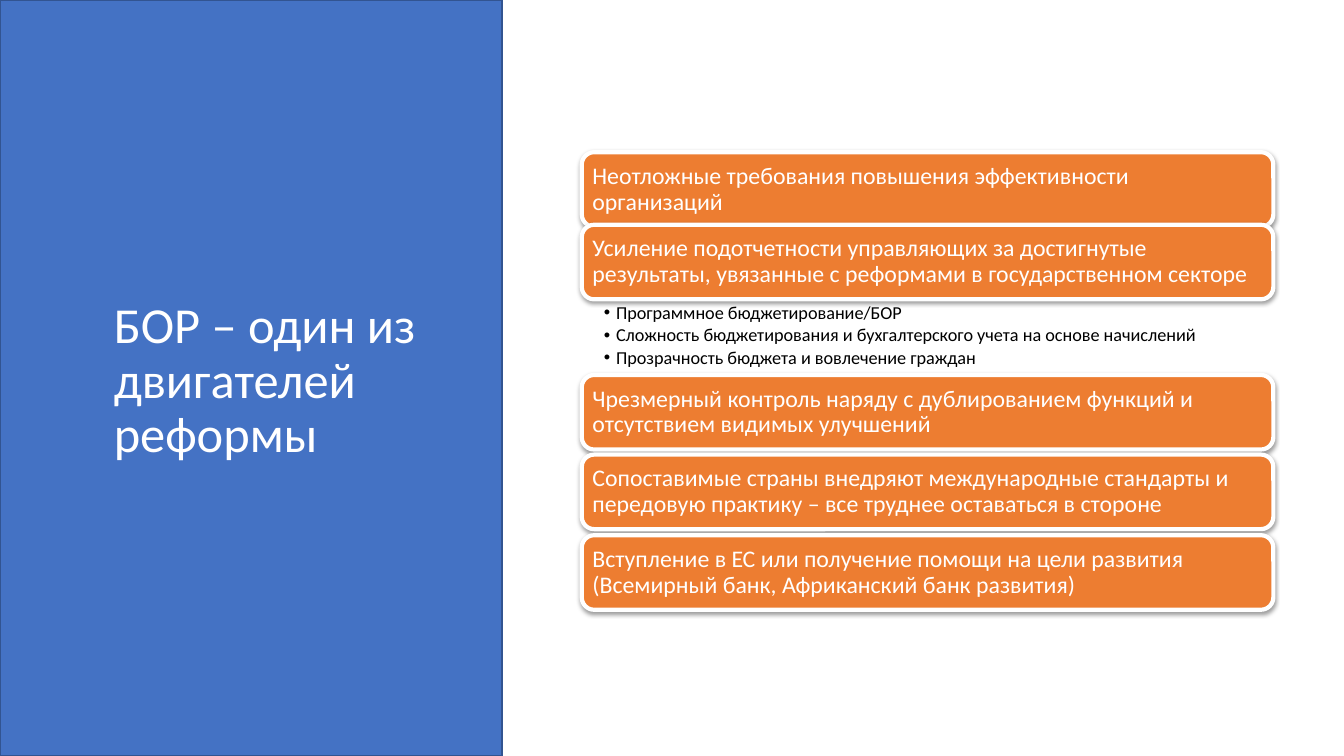
from dataclasses import dataclass
from lxml.etree import SubElement
from pptx import Presentation
from pptx.dml.color import RGBColor
from pptx.enum.shapes import MSO_SHAPE
from pptx.enum.text import MSO_ANCHOR, PP_ALIGN
from pptx.oxml.ns import qn
from pptx.shapes.autoshape import Shape
from pptx.slide import Slide
from pptx.util import Inches, Pt

COLORS = {"panel": "4472C4", "edge": "325491", "card": "ED7D31",
          "white": "FFFFFF", "black": "000000"}
LEFT, WIDTH, HEIGHT = 5.77, 6.86, 0.74


@dataclass
class Card:
    top: float
    text: str


CARDS = [
    Card(1.51, "Неотложные требования повышения эффективности организаций"),
    Card(2.23, "Усиление подотчетности управляющих за достигнутые результаты, "
               "увязанные с реформами в государственном секторе"),
    Card(3.72, "Чрезмерный контроль наряду с дублированием функций и "
               "отсутствием видимых улучшений"),
    Card(4.51, "Сопоставимые страны внедряют международные стандарты и "
               "передовую практику – все труднее оставаться в стороне"),
    Card(5.31, "Вступление в ЕС или получение помощи на цели развития "
               "(Всемирный банк, Африканский банк развития)"),
]
POINTS = [
    "Программное бюджетирование/БОР",
    "Сложность бюджетирования и бухгалтерского учета на основе начислений",
    "Прозрачность бюджета и вовлечение граждан",
]


def color(name: str) -> RGBColor:
    return RGBColor.from_string(COLORS[name])


def paint(shape: Shape, fill: str, line: str, width: float) -> None:
    shape.shadow.inherit = False
    shape.fill.solid()
    shape.fill.fore_color.rgb = color(fill)
    shape.line.color.rgb = color(line)
    shape.line.width = Pt(width)


def write(shape: Shape, text: str, size: float, ink: str,
          insets: tuple[float, float, float, float], anchor: MSO_ANCHOR) -> None:
    frame = shape.text_frame
    frame.text = text
    frame.word_wrap = True
    frame.vertical_anchor = anchor
    (frame.margin_left, frame.margin_top,
     frame.margin_right, frame.margin_bottom) = map(Inches, insets)
    for para in frame.paragraphs:
        para.alignment = PP_ALIGN.LEFT
        para.line_spacing = 0.9
        for run in para.runs:
            run.font.size = Pt(size)
            run.font.name = "Calibri"
            run.font.color.rgb = color(ink)


def shade(shape: Shape) -> None:
    effects = shape._element.spPr.find(qn("a:effectLst"))
    shadow = SubElement(effects, qn("a:outerShdw"), blurRad=str(Pt(3.1)),
                        dist=str(Pt(1.6)), dir="5400000", rotWithShape="0")
    tint = SubElement(shadow, qn("a:srgbClr"), val=COLORS["black"])
    SubElement(tint, qn("a:alpha"), val="38000")


def add_card(slide: Slide, card: Card) -> None:
    shape = slide.shapes.add_shape(
        MSO_SHAPE.ROUNDED_RECTANGLE, Inches(LEFT), Inches(card.top),
        Inches(WIDTH), Inches(HEIGHT))
    paint(shape, "card", "white", 3)
    shade(shape)
    write(shape, card.text, 17, "white", (0.07, 0.07, 0.07, 0.07), MSO_ANCHOR.MIDDLE)


def add_points(slide: Slide) -> None:
    box = slide.shapes.add_textbox(Inches(LEFT), Inches(2.99),
                                   Inches(WIDTH), Inches(0.73))
    write(box, "\n".join(POINTS), 13, "black", (0.22, 0.02, 0.13, 0.02), MSO_ANCHOR.TOP)
    for para in box.text_frame.paragraphs:
        para.space_after = Pt(2.1)
        props = para._p.get_or_add_pPr()
        props.set("marL", str(Inches(0.12)))
        props.set("indent", str(Inches(-0.12)))
        SubElement(props, qn("a:buFont"), typeface="Arial")
        SubElement(props, qn("a:buChar"), char="•")


def main() -> None:
    deck = Presentation()
    deck.slide_width, deck.slide_height = Inches(13.33), Inches(7.5)
    slide = deck.slides.add_slide(deck.slide_layouts[6])

    panel = slide.shapes.add_shape(MSO_SHAPE.RECTANGLE, 0, 0,
                                   Inches(4.98), Inches(7.5))
    paint(panel, "panel", "edge", 2)
    for card in CARDS:
        add_card(slide, card)
    add_points(slide)
    title = slide.shapes.add_textbox(Inches(1.03), Inches(0.78),
                                     Inches(3.69), Inches(6.02))
    write(title, "БОР – один из двигателей реформы", 36, "white",
          (0.1, 0.05, 0.1, 0.05), MSO_ANCHOR.MIDDLE)
    deck.save("out.pptx")


if __name__ == "__main__":
    main()
